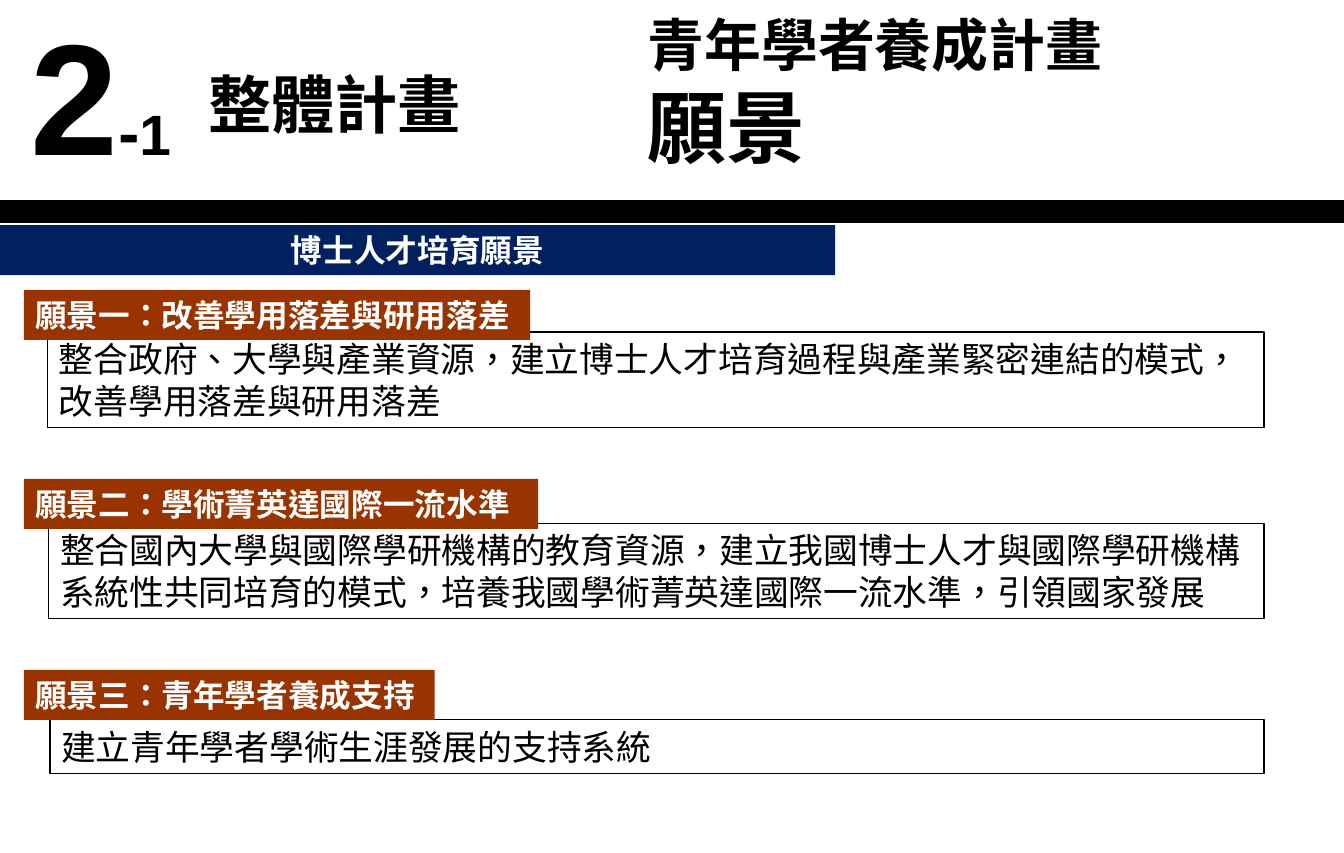
from lxml import etree
from pptx import Presentation, util as u
from pptx.dml.color import RGBColor
from pptx.enum import lang, shapes, text
from pptx.oxml import ns

COLOURS = {"ink": "000000", "paper": "FFFFFF", "navy": "002060", "rust": "993300"}
CJK_FONT = "Noto Sans CJK SC"
LINE_FACTOR = 1.21
SLIDE_WIDTH, SLIDE_HEIGHT = 189 / 16, 7.5
BOX_RIGHT = 11.11
LABEL_LEFT, LABEL_HEIGHT = 0.21, 0.44

# label, label top, label width, statement, box left, box top, box height
VISIONS = [
    ("願景一：改善學用落差與研用落差", 2.55, 4.45,
     "整合政府、大學與產業資源，建立博士人才培育過程與產業緊密連結的模式，改善學用落差與研用落差",
     0.42, 2.92, 0.84),
    ("願景二：學術菁英達國際一流水準", 4.21, 4.52,
     "整合國內大學與國際學研機構的教育資源，建立我國博士人才與國際學研機構系統性共同培育的模式，"
     "培養我國學術菁英達國際一流水準，引領國家發展",
     0.43, 4.6, 0.84),
    ("願景三：青年學者養成支持", 5.89, 3.61,
     "建立青年學者學術生涯發展的支持系統", 0.44, 6.33, 0.47),
]


def colour(name):
    return RGBColor.from_string(COLOURS[name])


def write(paragraph, content, size, ink="ink", bold=False, font=CJK_FONT,
          align=text.PP_ALIGN.LEFT, fixed_spacing=True):
    """Add a formatted run to a paragraph."""
    paragraph.alignment = align
    if fixed_spacing:
        paragraph.line_spacing = u.Pt(round(size * LINE_FACTOR, 1))
    run = paragraph.add_run()
    run.text = content
    run.font.size = u.Pt(size)
    run.font.bold = bold
    run.font.language_id = lang.MSO_LANGUAGE_ID.TRADITIONAL_CHINESE
    run.font.color.rgb = colour(ink)
    run.font.name = font
    # East Asian typeface
    properties = run.font._element
    etree.SubElement(properties, ns.qn("a:ea")).set("typeface", CJK_FONT)


class VisionSlide:
    def __init__(self, presentation):
        layout = presentation.slide_layouts.get_by_name("Title Only")
        self.slide = presentation.slides.add_slide(layout)

    def title(self, lines, left, top, width, height):
        shape = self.slide.shapes.title
        shape.left, shape.top = u.Inches(left), u.Inches(top)
        shape.width, shape.height = u.Inches(width), u.Inches(height)
        frame = shape.text_frame
        frame.word_wrap = True
        frame.auto_size = text.MSO_AUTO_SIZE.NONE
        frame.vertical_anchor = text.MSO_ANCHOR.TOP
        for index, (content, size) in enumerate(lines):
            paragraph = frame.add_paragraph() if index else frame.paragraphs[0]
            paragraph.space_before = u.Pt(0)
            write(paragraph, content, size, bold=True, align=text.PP_ALIGN.JUSTIFY)

    def section_table(self, number_runs, name, left, top, widths, height):
        table = self.slide.shapes.add_table(
            1, len(widths), u.Inches(left), u.Inches(top),
            u.Inches(sum(widths)), u.Inches(height)).table
        table.first_row = table.horz_banding = False
        table.rows[0].height = u.Inches(height)
        for column, width in zip(table.columns, widths):
            column.width = u.Inches(width)
        columns = [(number_runs, text.PP_ALIGN.CENTER), ([(name, 40)], text.PP_ALIGN.LEFT)]
        for cell, (runs, align) in zip(table.rows[0].cells, columns):
            cell.vertical_anchor = text.MSO_ANCHOR.MIDDLE
            # No cell borders
            properties = cell._tc.get_or_add_tcPr()
            for side in ("a:lnL", "a:lnR", "a:lnT", "a:lnB"):
                border = etree.SubElement(properties, ns.qn(side))
                etree.SubElement(border, ns.qn("a:noFill"))
            cell.fill.background()
            for content, size in runs:
                write(cell.text_frame.paragraphs[0], content, size, bold=True,
                      font="Arial", align=align, fixed_spacing=False)

    def rule(self, y, width, weight):
        line = self.slide.shapes.add_connector(
            shapes.MSO_CONNECTOR.STRAIGHT, u.Inches(0), u.Inches(y), u.Inches(width), u.Inches(y))
        line.line.color.rgb = colour("ink")
        line.line.width = u.Pt(weight)
        etree.SubElement(line._element.spPr, ns.qn("a:effectLst"))

    def box(self, content, left, top, width, height, size, fill=None,
            anchor=text.MSO_ANCHOR.MIDDLE, **style):
        shape = self.slide.shapes.add_shape(
            shapes.MSO_SHAPE.RECTANGLE, u.Inches(left), u.Inches(top),
            u.Inches(width), u.Inches(height))
        shape.shadow.inherit = False
        if fill:
            shape.fill.solid()
            shape.fill.fore_color.rgb = colour(fill)
            shape.line.fill.background()
        else:
            shape.fill.background()
            shape.line.color.rgb = colour("ink")
            shape.line.width = u.Pt(0.75)
        frame = shape.text_frame
        frame.word_wrap = True
        frame.vertical_anchor = anchor
        write(frame.paragraphs[0], content, size, **style)


def main():
    presentation = Presentation()
    presentation.slide_width = u.Inches(SLIDE_WIDTH)
    presentation.slide_height = u.Inches(SLIDE_HEIGHT)
    page = VisionSlide(presentation)

    # Header
    page.rule(1.86, SLIDE_WIDTH, 15)
    page.section_table([("2", 100), ("-", 40), ("1", 36)], "整體計畫",
                       0.04, 0, [1.69, 2.52], 1.77)
    page.title([("青年學者養成計畫", 36), ("願景", 50)], 5.59, 0.03, 5.8, 1.55)

    # Section banner
    page.box("博士人才培育願景", 0, 1.98, 7.34, LABEL_HEIGHT, 20, fill="navy",
             ink="paper", bold=True, align=text.PP_ALIGN.CENTER)

    # Visions: outlined statement with its label on top
    for label, label_top, label_width, statement, left, top, height in VISIONS:
        page.box(statement, left, top, BOX_RIGHT - left, height, 22,
                 anchor=text.MSO_ANCHOR.TOP)
        page.box(label, LABEL_LEFT, label_top, label_width, LABEL_HEIGHT, 20,
                 fill="rust", ink="paper", bold=True)

    presentation.save("out.pptx")


if __name__ == "__main__":
    main()
